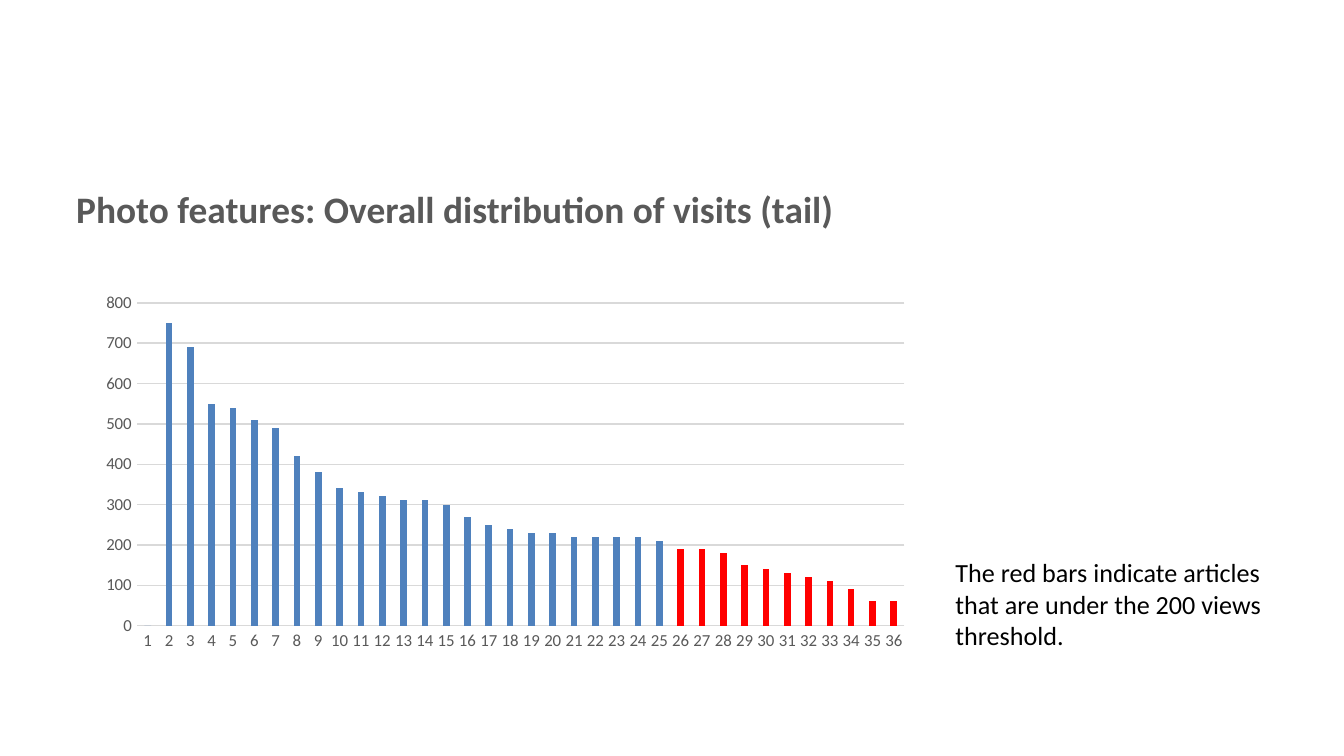
import pptx
import pptx.util
import pptx.dml.color
import pptx.chart.data
import pptx.enum.chart
import pptx.enum.text

PX = 9525
FONT = "Calibri"
COLORS = {"text": "000000", "gray": "595959", "grid": "D9D9D9",
          "bar": "4F81BD", "low": "FF0000"}
VISITS = [0, 750, 690, 550, 540, 510, 490, 420, 380, 340, 330, 320,
          310, 310, 300, 270, 250, 240, 230, 230, 220, 220, 220, 220,
          210, 190, 190, 180, 150, 140, 130, 120, 110, 90, 60, 60]
LIMIT = 200


class Deck:
    """Hold the style and the current slide, and draw its elements."""

    def __init__(self, width, height):
        self.file = pptx.Presentation()
        self.file.slide_width = width * PX
        self.file.slide_height = height * PX
        self.slide = self.file.slides.add_slide(self.file.slide_layouts[6])

    def color(self, name):
        return pptx.dml.color.RGBColor.from_string(COLORS[name])

    def style(self, font, size, color, bold=False):
        font.name = FONT
        font.size = pptx.util.Pt(size)
        font.bold = bold
        font.color.rgb = self.color(color)

    def line(self, line):
        line.color.rgb = self.color("grid")
        line.width = pptx.util.Pt(0.75)

    def text(self, box, words, size, color, bold=False):
        frame = self.slide.shapes.add_textbox(*(n * PX for n in box)).text_frame
        frame.word_wrap = True
        frame.auto_size = pptx.enum.text.MSO_AUTO_SIZE.NONE
        run = frame.paragraphs[0].add_run()
        run.text = words
        self.style(run.font, size, color, bold)

    def chart(self, box, values, limit):
        data = pptx.chart.data.CategoryChartData(number_format="General")
        data.categories = [str(n + 1) for n in range(len(values))]
        data.add_series("Series 1", values)
        kind = pptx.enum.chart.XL_CHART_TYPE.COLUMN_CLUSTERED
        frame = self.slide.shapes.add_chart(kind, *(n * PX for n in box), data)
        chart = frame.chart
        chart.has_legend = False
        chart.has_title = False
        self.style(chart.font, 10, "text")
        for axis in (chart.category_axis, chart.value_axis):
            axis.major_tick_mark = pptx.enum.chart.XL_TICK_MARK.NONE
            axis.minor_tick_mark = pptx.enum.chart.XL_TICK_MARK.NONE
            self.style(axis.tick_labels.font, 9, "gray")
        self.line(chart.category_axis.format.line)
        axis = chart.value_axis
        axis.format.line.fill.background()
        axis.minimum_scale = 0
        axis.maximum_scale = 800
        axis.major_unit = 100
        self.line(axis.major_gridlines.format.line)
        plot = chart.plots[0]
        plot.vary_by_categories = False
        plot.gap_width = 219
        plot.overlap = -27
        bars = plot.series[0]
        self.fill(bars, "bar")
        for place, value in enumerate(values):
            if 0 < value < limit:
                self.fill(bars.points[place], "low")

    def fill(self, part, color):
        part.format.fill.solid()
        part.format.fill.fore_color.rgb = self.color(color)


def main():
    deck = Deck(960, 540)
    deck.text((45, 128, 634, 64),
              "Photo features: Overall distribution of visits (tail)",
              20, "gray", True)
    deck.text((673, 393, 257, 78),
              "The red bars indicate articles that are under the "
              "200 views threshold.", 14, "text")
    deck.chart((64, 204, 594, 266), VISITS, LIMIT)
    deck.file.save("out.pptx")


if __name__ == "__main__":
    main()
